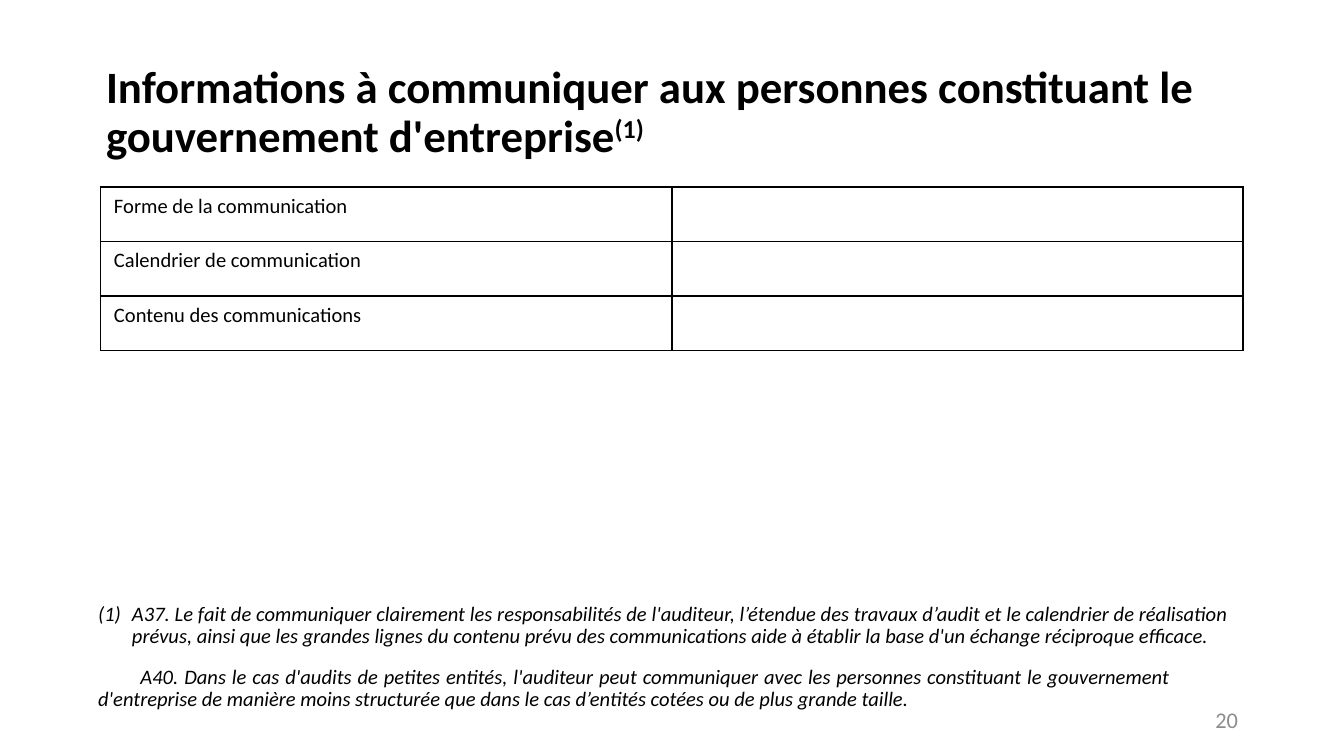
from pptx import Presentation
from pptx import util as u
from pptx.dml import color as c
from pptx.enum import text as t
from pptx.oxml import ns
from lxml import etree

COLORS = {"ink": "000000", "grey": "8C8C8C"}
FONT = "Calibri"
TITLE = "Informations à communiquer aux personnes constituant le gouvernement d'entreprise"
ROWS = ["Forme de la communication", "Calendrier de communication", "Contenu des communications"]
NOTES = [
    "A37. Le fait de communiquer clairement les responsabilités de l'auditeur, l’étendue des travaux "
    "d’audit et le calendrier de réalisation prévus, ainsi que les grandes lignes du contenu prévu des "
    "communications aide à établir la base d'un échange réciproque efficace.",
    "A40. Dans le cas d'audits de petites entités, l'auditeur peut communiquer avec les personnes "
    "constituant le gouvernement d'entreprise de manière moins structurée que dans le cas d’entités "
    "cotées ou de plus grande taille.",
]


def add_run(para, words, size, color="ink", bold=False, slant=False):
    run = para.add_run()
    run.text = words
    font = run.font
    font.name, font.size = FONT, u.Pt(size)
    font.bold, font.italic = bold, slant
    font.color.rgb = c.RGBColor.from_string(COLORS[color])
    return run


def place(shape, box):
    shape.left, shape.top, shape.width, shape.height = [u.Cm(n) for n in box]
    frame = shape.text_frame
    frame.word_wrap = True
    frame.auto_size = t.MSO_AUTO_SIZE.NONE
    return frame


def add_title(slide, box):
    frame = place(slide.shapes.title, box)
    frame.vertical_anchor = t.MSO_ANCHOR.MIDDLE
    para = frame.paragraphs[0]
    para.alignment = t.PP_ALIGN.LEFT
    para.line_spacing = 0.9
    add_run(para, TITLE, 24, bold=True)
    mark = add_run(para, "(1)", 24, bold=True)
    mark.font._element.set("baseline", "30000")


def add_edges(cell):
    props = cell._tc.get_or_add_tcPr()
    for side in ("lnL", "lnR", "lnT", "lnB"):
        line = etree.SubElement(props, ns.qn("a:" + side), w=str(u.Pt(1)))
        fill = etree.SubElement(line, ns.qn("a:solidFill"))
        etree.SubElement(fill, ns.qn("a:srgbClr"), val=COLORS["ink"])
    cell.fill.background()


def add_grid(slide, box):
    table = slide.shapes.add_table(len(ROWS), 2, *[u.Cm(n) for n in box]).table
    table.first_row = table.horz_banding = False
    for row, label in enumerate(ROWS):
        add_run(table.cell(row, 0).text_frame.paragraphs[0], label, 11)
    for cell in table.iter_cells():
        add_edges(cell)


def add_notes(slide, box):
    frame = place(slide.placeholders[1], box)
    frame.vertical_anchor = t.MSO_ANCHOR.TOP
    first, last = frame.paragraphs[0], frame.add_paragraph()
    for para, words in zip((first, last), NOTES):
        para.alignment = t.PP_ALIGN.JUSTIFY
        para.line_spacing = 0.9
        para.space_before = u.Pt(10)
        add_run(para, words, 11, slant=True)
    props = first._p.get_or_add_pPr()
    props.set("marL", str(u.Cm(0.64)))
    props.set("indent", str(u.Cm(-0.64)))
    etree.SubElement(props, ns.qn("a:buFont"), typeface=FONT)
    etree.SubElement(props, ns.qn("a:buAutoNum"), type="arabicParenBoth")
    props = last._p.get_or_add_pPr()
    props.set("marL", "0")
    props.set("marR", str(u.Cm(1.1)))
    props.set("indent", str(u.Cm(0.8)))
    etree.SubElement(props, ns.qn("a:buNone"))


def add_number(slide, box):
    frame = place(slide.shapes.add_textbox(0, 0, 0, 0), box)
    frame.vertical_anchor = t.MSO_ANCHOR.MIDDLE
    para = frame.paragraphs[0]
    para.alignment = t.PP_ALIGN.RIGHT
    add_run(para, "20", 12, "grey")


def main():
    deck = Presentation()
    deck.slide_width, deck.slide_height = u.Cm(25.4), u.Cm(14.29)
    slide = deck.slides.add_slide(deck.slide_layouts[1])
    add_title(slide, (1.75, 0.76, 21.89, 2.77))
    add_number(slide, (17.93, 13.23, 5.72, 0.76))
    add_notes(slide, (1.6, 11.28, 21.89, 1.24))
    add_grid(slide, (1.9, 3.53, 21.59, 3.1))
    deck.save("out.pptx")


if __name__ == "__main__":
    main()
